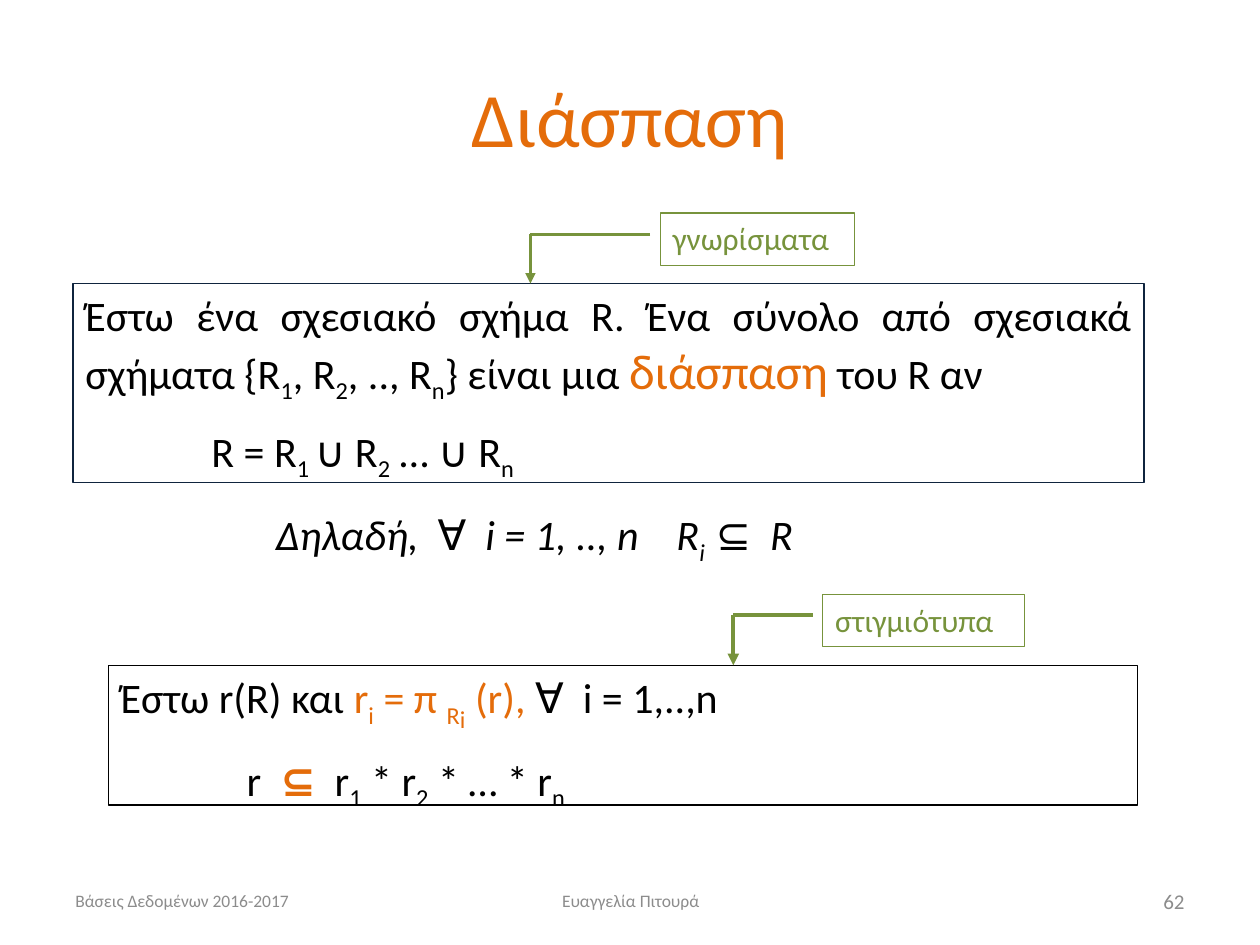
import dataclasses

import lxml.etree
import pptx
import pptx.dml.color
import pptx.enum.shapes
import pptx.enum.text
import pptx.oxml.ns
import pptx.util

Inches = pptx.util.Inches
Pt = pptx.util.Pt
ALIGN = pptx.enum.text.PP_ALIGN
ANCHOR = pptx.enum.text.MSO_ANCHOR
qn = pptx.oxml.ns.qn


@dataclasses.dataclass(frozen=True)
class Theme:
    font: str = "Calibri"
    ink: str = "000000"
    navy: str = "0F243E"
    accent: str = "E46C0A"
    green: str = "77933C"
    muted: str = "8C8C8C"
    title: int = 44
    emphasis: int = 28
    body: int = 24
    label: int = 18
    number: int = 12
    footer: int = 10
    gap: int = 12
    thin: float = 0.75


THEME = Theme()
SUBSCRIPT = {"baseline": -25}
ACCENT = {"color": THEME.accent}
ACCENT_SUBSCRIPT = ACCENT | SUBSCRIPT


class SlideBuilder:
    def __init__(self, slide, theme):
        self.slide = slide
        self.theme = theme

    def color(self, value):
        return pptx.dml.color.RGBColor.from_string(value)

    def format_run(self, run, size, color, bold=False, italic=False, baseline=0):
        font = run.font
        font.name = self.theme.font
        font.size = Pt(size)
        font.bold = bold
        font.italic = italic
        font.color.rgb = self.color(color)
        if baseline:
            run._r.get_or_add_rPr().set("baseline", str(baseline * 1000))

    def write_paragraph(self, paragraph, parts, align=ALIGN.LEFT, indent=0, tab=0, **style):
        paragraph.alignment = align
        paragraph.space_before = Pt(self.theme.gap)
        properties = paragraph._p.get_or_add_pPr()
        if indent:
            properties.set("marL", str(Inches(indent)))
        if tab:
            tabs = lxml.etree.SubElement(properties, qn("a:tabLst"))
            lxml.etree.SubElement(tabs, qn("a:tab"), pos=str(Inches(tab)), algn="l")
        base = {"size": self.theme.body, "color": self.theme.ink} | style
        for text, changes in parts:
            run = paragraph.add_run()
            run.text = text
            self.format_run(run, **(base | changes))

    def text(self, box, text, size, color, align=ALIGN.LEFT):
        shape = self.slide.shapes.add_textbox(*map(Inches, box))
        frame = shape.text_frame
        frame.word_wrap = True
        frame.vertical_anchor = ANCHOR.MIDDLE
        frame.text = text
        frame.paragraphs[0].alignment = align
        self.format_run(frame.paragraphs[0].runs[0], size, color)

    def formula(self, box, parts, **style):
        shape = self.slide.shapes.add_textbox(*map(Inches, box))
        shape.text_frame.word_wrap = True
        self.write_paragraph(shape.text_frame.paragraphs[0], parts, **style)

    def frame(self, box, line_color, paragraphs):
        shape = self.slide.shapes.add_shape(
            pptx.enum.shapes.MSO_SHAPE.RECTANGLE, *map(Inches, box))
        shape.shadow.inherit = False
        shape.fill.background()
        shape.line.color.rgb = self.color(line_color)
        shape.line.width = Pt(self.theme.thin)
        frame = shape.text_frame
        frame.word_wrap = True
        frame.vertical_anchor = ANCHOR.TOP
        for index, (parts, style) in enumerate(paragraphs):
            paragraph = frame.add_paragraph() if index else frame.paragraphs[0]
            self.write_paragraph(paragraph, parts, **style)

    def label(self, box, text):
        green = self.theme.green
        style = {"size": self.theme.label, "color": green}
        self.frame(box, green, [([(text, {})], style)])

    def line(self, start, end, width, arrow=False):
        connector = self.slide.shapes.add_connector(
            pptx.enum.shapes.MSO_CONNECTOR.STRAIGHT, *map(Inches, start + end))
        connector.line.color.rgb = self.color(self.theme.green)
        connector.line.width = Pt(width)
        if arrow:
            outline = connector.line._get_or_add_ln()
            lxml.etree.SubElement(outline, qn("a:tailEnd"), type="triangle")
        lxml.etree.SubElement(connector._element.spPr, qn("a:effectLst"))

    def bent_arrow(self, start, tip, width):
        corner = (tip[0], start[1])
        self.line(start, corner, width)
        self.line(corner, tip, width, arrow=True)


def main():
    presentation = pptx.Presentation()
    presentation.slide_width = Inches(10)
    presentation.slide_height = Inches(7.5)
    slide = presentation.slides.add_slide(presentation.slide_layouts[6])
    builder = SlideBuilder(slide, THEME)

    builder.text((0.5, 0.3, 9, 1.25), "Διάσπαση", THEME.title, THEME.accent, ALIGN.CENTER)

    schema = [
        ("Έστω ένα σχεσιακό σχήμα R. Ένα σύνολο από σχεσιακά σχήματα {R", {}),
        ("1", SUBSCRIPT), (", R", {}), ("2", SUBSCRIPT),
        (", .., R", {}), ("n", SUBSCRIPT), ("} είναι μια ", {}),
        ("διάσπαση", ACCENT | {"size": THEME.emphasis}), (" του R αν", {}),
    ]
    union = [
        ("R = R", {}), ("1 ", SUBSCRIPT), ("∪ R", {}), ("2", SUBSCRIPT),
        (" … ∪ R", {}), ("n", SUBSCRIPT),
    ]
    builder.frame((0.58, 2.25, 8.5, 1.58), THEME.navy, [
        (schema, {"align": ALIGN.JUSTIFY}),
        (union, {"align": ALIGN.JUSTIFY, "indent": 1}),
    ])

    subset = [("Δηλαδή,  ∀  i = 1, .., n\tR", {}), ("i  ", SUBSCRIPT), ("⊆  R", {})]
    builder.formula((2.09, 3.99, 5.59, 0.5), subset, italic=True, tab=3.18)

    projection = [
        ("Έστω r(R) και ", {}), ("r", ACCENT), ("i", ACCENT_SUBSCRIPT),
        (" = π ", ACCENT), ("R", ACCENT_SUBSCRIPT), ("i", ACCENT | {"baseline": -36}),
        (" (r), ", ACCENT), ("∀  i = 1,..,n", {}),
    ]
    join = [
        ("r  ", {}), ("⊆ ", ACCENT | {"bold": True}), (" r", {}), ("1", SUBSCRIPT),
        (" * r", {}), ("2", SUBSCRIPT), (" * … * r", {}), ("n", SUBSCRIPT),
    ]
    builder.frame((0.86, 5.28, 8.17, 1.11), THEME.ink, [
        (projection, {}),
        (join, {"indent": 1}),
    ])

    builder.label((5.24, 1.69, 1.54, 0.42), "γνωρίσματα")
    builder.label((6.53, 4.72, 1.6, 0.41), "στιγμιότυπα")
    builder.bent_arrow((5.16, 1.86), (4.21, 2.25), 1.5)
    builder.bent_arrow((6.45, 4.88), (5.82, 5.28), 2.25)

    builder.text((0.5, 6.95, 2.33, 0.4), "Βάσεις Δεδομένων 2016-2017",
                 THEME.footer, THEME.muted)
    builder.text((3.42, 6.95, 3.17, 0.4), "Ευαγγελία Πιτουρά",
                 THEME.footer, THEME.muted, ALIGN.CENTER)
    builder.text((7.17, 6.95, 2.33, 0.4), "62", THEME.number, THEME.muted, ALIGN.RIGHT)

    presentation.save("out.pptx")


if __name__ == "__main__":
    main()
